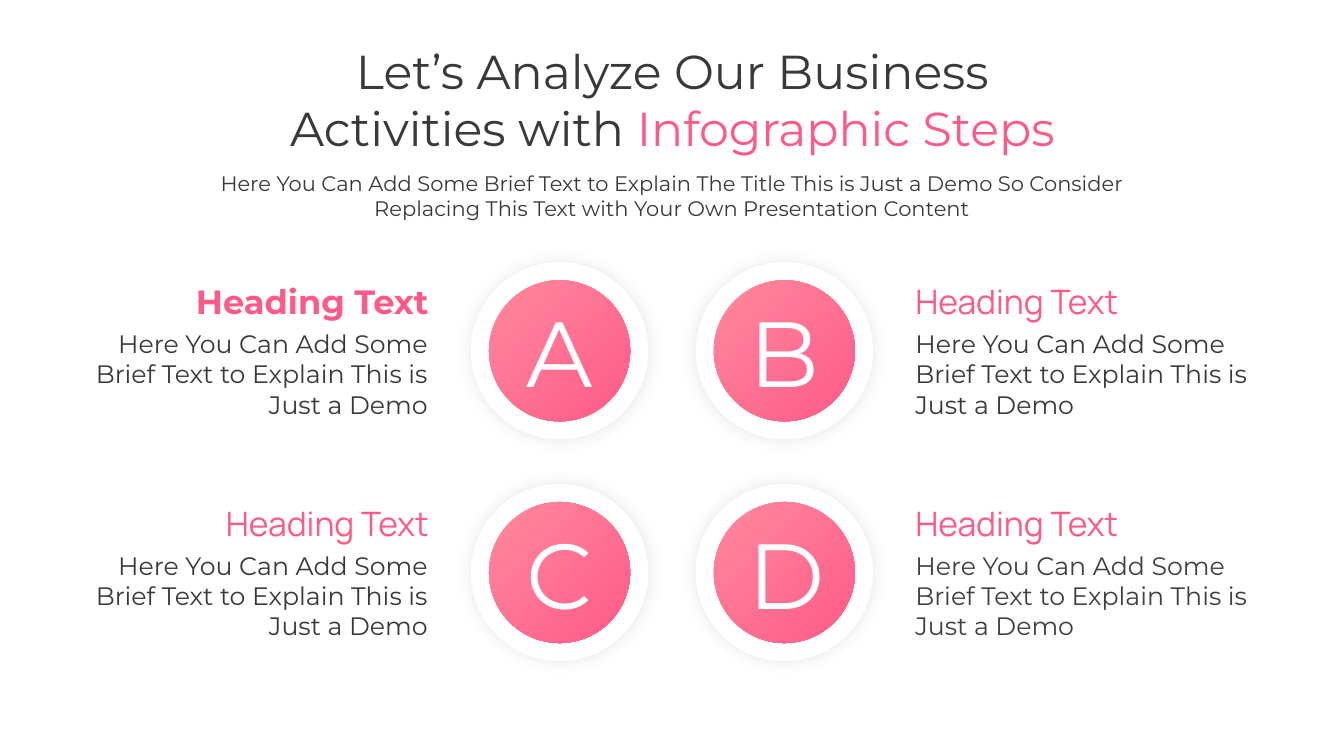
from lxml.etree import SubElement
from pptx import Presentation
from pptx.dml.color import RGBColor
from pptx.enum.shapes import MSO_SHAPE
from pptx.enum.text import MSO_AUTO_SIZE, PP_ALIGN
from pptx.oxml.ns import qn
from pptx.util import Inches, Pt

PINK = RGBColor(0xFF, 0x59, 0x8A)
PEACH = RGBColor(0xFF, 0x8A, 0x9C)
DARK = RGBColor(0x3B, 0x38, 0x38)
GRAY = RGBColor(0x40, 0x40, 0x40)
WHITE = RGBColor(0xFF, 0xFF, 0xFF)

TITLE = [["Let’s Analyze Our Business"], ["Activities with ", "Infographic Steps"]]
INTRO = ("Here You Can Add Some Brief Text to Explain The Title This is Just a Demo "
         "So Consider Replacing This Text with Your Own Presentation Content")
BODY = "Here You Can Add Some Brief Text to Explain This is Just a Demo"

ROW_GAP = 2.2
RING, DISC = 1.76, 1.4

# letter, column, row, heading font, heading bold, body colour
STEPS = [
    ("A", 0, 0, "Montserrat", True, DARK),
    ("B", 1, 0, "Manrope", False, DARK),
    ("C", 0, 1, "Manrope", False, DARK),
    ("D", 1, 1, "Manrope", False, GRAY),
]


def add_run(para, text, size, color, name="Montserrat", bold=False):
    run = para.add_run()
    run.text = text
    formats = {"size": Pt(size), "name": name, "bold": bold}
    for key, value in formats.items():
        setattr(run.font, key, value)
    run.font.color.rgb = color


def add_box(shapes, left, top, width, height, align, wrap=True):
    """Add an empty text box and return its first paragraph."""
    box = shapes.add_textbox(*map(Inches, (left, top, width, height)))
    frame = box.text_frame
    frame.word_wrap = wrap
    frame.auto_size = MSO_AUTO_SIZE.SHAPE_TO_FIT_TEXT
    para = frame.paragraphs[0]
    para.alignment = align
    return para


def add_circle(shapes, left, top, size):
    circle = shapes.add_shape(MSO_SHAPE.OVAL, *map(Inches, (left, top, size, size)))
    circle.line.fill.background()
    circle.shadow.inherit = False
    return circle


def add_glow(shape):
    """Give the shape a soft, centred black shadow."""
    effects = shape._element.spPr.find(qn("a:effectLst"))
    shadow = SubElement(effects, qn("a:outerShdw"), blurRad=str(Pt(12)),
                        dist="0", dir="0", algn="ctr", rotWithShape="0")
    color = SubElement(shadow, qn("a:srgbClr"), val="000000")
    SubElement(color, qn("a:alpha"), val="10000")


def fill_radial(shape):
    """Fill from pink at the lower right corner to peach."""
    shape.fill.gradient()
    for stop, color in zip(shape.fill.gradient_stops, (PINK, PEACH)):
        stop.color.rgb = color
    grad = shape._element.spPr.find(qn("a:gradFill"))
    grad.remove(grad.find(qn("a:lin")))
    radial = SubElement(grad, qn("a:path"), path="circle")
    SubElement(radial, qn("a:fillToRect"), l="100000", t="100000")


def add_badge(slide, left, top):
    shapes = slide.shapes.add_group_shape().shapes
    ring = add_circle(shapes, left, top, RING)
    ring.fill.solid()
    ring.fill.fore_color.rgb = WHITE
    add_glow(ring)
    inset = (RING - DISC) / 2
    fill_radial(add_circle(shapes, left + inset, top + inset, DISC))


def add_step(slide, letter, col, row, font, bold, color):
    shift = row * ROW_GAP
    left = (0.55, 8.98)[col]
    align = (PP_ALIGN.RIGHT, PP_ALIGN.LEFT)[col]
    shapes = slide.shapes.add_group_shape().shapes
    head = add_box(shapes, left, 2.74 + shift, 3.8, 0.5, align)
    add_run(head, "Heading Text", 24, PINK, font, bold)
    body = add_box(shapes, left, 3.21 + shift, 3.79, 1.01, align)
    add_run(body, BODY, 18, color)

    add_badge(slide, (4.67, 6.9)[col], 2.6 + shift)
    mark = add_box(slide.shapes, (5.11, 7.33)[col], 2.88 + shift, 0.89, 1.21,
                   PP_ALIGN.CENTER)
    add_run(mark, letter, 66, WHITE)


def add_header(slide):
    title = add_box(slide.shapes, 2.4, 0.37, 8.54, 1.25, PP_ALIGN.CENTER, wrap=False)
    for index, line in enumerate(TITLE):
        if index:
            title.add_line_break()
        for text, color in zip(line, (DARK, PINK)):
            add_run(title, text, 34, color)
    intro = add_box(slide.shapes, 1.63, 1.64, 10.07, 0.61, PP_ALIGN.CENTER)
    add_run(intro, INTRO, 15, DARK)


def main():
    deck = Presentation()
    deck.slide_width, deck.slide_height = Inches(13.33), Inches(7.5)
    slide = deck.slides.add_slide(deck.slide_layouts[6])
    for step in STEPS:
        add_step(slide, *step)
    add_header(slide)
    deck.save("out.pptx")


if __name__ == "__main__":
    main()
